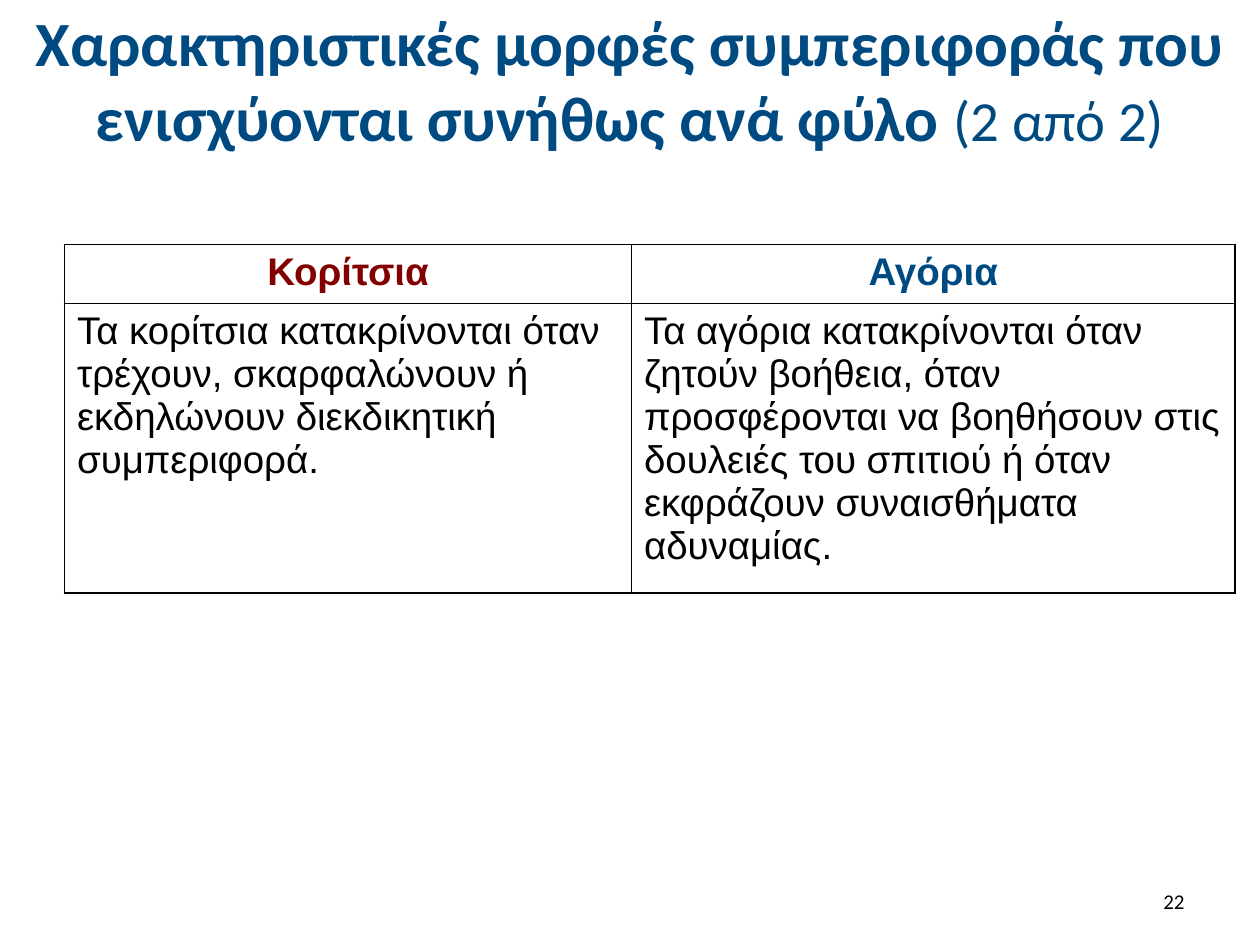
from lxml.etree import SubElement
from pptx import Presentation
from pptx.dml.color import RGBColor
from pptx.enum.text import MSO_ANCHOR as Anchor, MSO_AUTO_SIZE as AutoSize, PP_ALIGN as Align
from pptx.oxml.ns import qn
from pptx.util import Cm, Pt

# Content
BLUE, RED, BLACK, WHITE = "004A82", "820000", "000000", "FFFFFF"
TITLE = [
    ("Χαρακτηριστικές μορφές συμπεριφοράς που ενισχύονται συνήθως ανά φύλο ", 36, True),
    ("(2 από 2)", 32.4, False),
]
PAGE = "22"
# heading, heading colour, column width in cm, description
COLUMNS = [
    ("Κορίτσια", RED, 11.43,
     "Τα κορίτσια κατακρίνονται όταν τρέχουν, σκαρφαλώνουν ή εκδηλώνουν "
     "διεκδικητική συμπεριφορά."),
    ("Αγόρια", BLUE, 12.17,
     "Τα αγόρια κατακρίνονται όταν ζητούν βοήθεια, όταν προσφέρονται να "
     "βοηθήσουν στις δουλειές του σπιτιού ή όταν εκφράζουν συναισθήματα αδυναμίας."),
]
ROW_HEIGHTS = (1.12, 5.46)


def rgb(colour):
    return RGBColor.from_string(colour)


def add_run(paragraph, text, size, colour, font="Calibri", bold=False):
    run = paragraph.add_run()
    run.text = text
    run.font.name, run.font.size, run.font.bold = font, Pt(size), bold
    run.font.color.rgb = rgb(colour)


def add_borders(cell):
    properties = cell._tc.get_or_add_tcPr()
    for position, side in enumerate(("a:lnL", "a:lnR", "a:lnT", "a:lnB")):
        line = SubElement(properties, qn(side), w=str(Pt(1)))
        fill = SubElement(line, qn("a:solidFill"))
        SubElement(fill, qn("a:srgbClr"), val=BLACK)
        properties.insert(position, line)  # borders precede the cell fill


def fill_cell(cell, text, colour, align, bold):
    cell.fill.solid()
    cell.fill.fore_color.rgb = rgb(WHITE)
    add_borders(cell)
    paragraph = cell.text_frame.paragraphs[0]
    paragraph.alignment = align
    add_run(paragraph, text, 22, colour, "Arial", bold)


def main():
    deck = Presentation()
    deck.slide_width, deck.slide_height = Cm(25.4), Cm(19.05)
    slide = deck.slides.add_slide(deck.slide_layouts[5])

    # Title
    title = slide.shapes.title
    title.left, title.top = Cm(0), Cm(0.33)
    title.width, title.height = deck.slide_width, Cm(2.51)
    frame = title.text_frame
    frame.auto_size, frame.word_wrap = AutoSize.NONE, True
    frame.vertical_anchor = Anchor.MIDDLE
    frame.paragraphs[0].alignment = Align.CENTER
    for text, size, bold in TITLE:
        add_run(frame.paragraphs[0], text, size, BLUE, bold=bold)

    # Page number
    page = slide.shapes.add_textbox(Cm(18.2), Cm(17.66), Cm(5.93), Cm(1.01)).text_frame
    page.word_wrap, page.vertical_anchor = True, Anchor.MIDDLE
    page.paragraphs[0].alignment = Align.RIGHT
    add_run(page.paragraphs[0], PAGE, 12, BLACK)

    # Comparison table
    table_width = sum(width for _, _, width, _ in COLUMNS)
    table = slide.shapes.add_table(
        len(ROW_HEIGHTS), len(COLUMNS), Cm(1.3), Cm(4.93),
        Cm(table_width), Cm(sum(ROW_HEIGHTS))).table
    for row, height in zip(table.rows, ROW_HEIGHTS):
        row.height = Cm(height)
    for index, (heading, colour, width, description) in enumerate(COLUMNS):
        table.columns[index].width = Cm(width)
        fill_cell(table.cell(0, index), heading, colour, Align.CENTER, True)
        fill_cell(table.cell(1, index), description, BLACK, Align.LEFT, False)

    deck.save("out.pptx")


if __name__ == "__main__":
    main()
